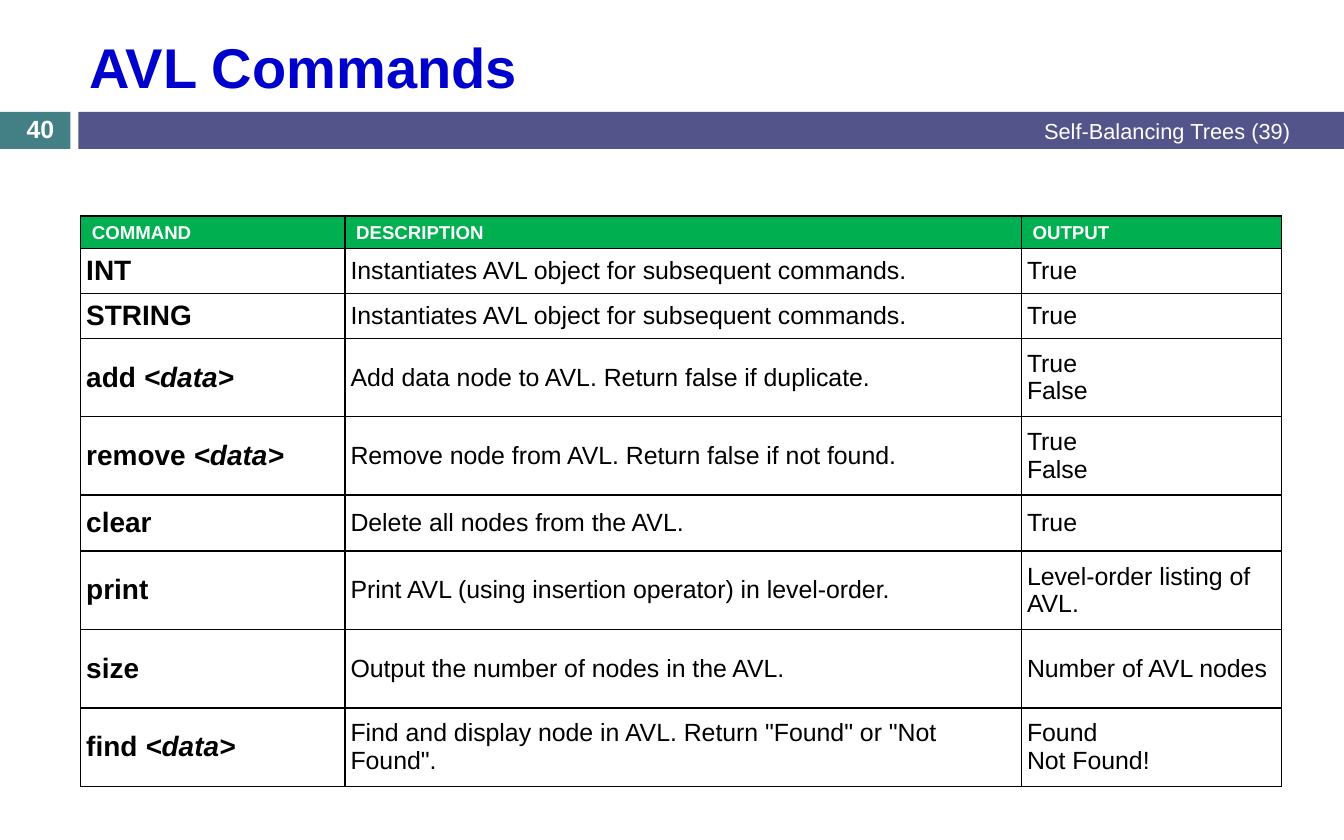
from lxml.etree import SubElement
from pptx import Presentation
from pptx.dml.color import RGBColor
from pptx.enum.shapes import MSO_SHAPE
from pptx.enum.text import MSO_ANCHOR, MSO_AUTO_SIZE, PP_ALIGN
from pptx.oxml.ns import qn
from pptx.util import Inches, Pt


def format_text(text_frame, size, color, bold=False, alignment=PP_ALIGN.LEFT):
    text_frame.word_wrap = True
    for paragraph in text_frame.paragraphs:
        paragraph.alignment = alignment
        for run in paragraph.runs:
            run.font.name = "Arial"
            run.font.size = Pt(size)
            run.font.bold = bold
            run.font.color.rgb = RGBColor.from_string(color)


def format_cell(cell, fill):
    cell.vertical_anchor = MSO_ANCHOR.MIDDLE
    properties = cell._tc.get_or_add_tcPr()
    for side in ("a:lnL", "a:lnR", "a:lnT", "a:lnB"):
        line = SubElement(properties, qn(side), w=str(Pt(1)))
        SubElement(SubElement(line, qn("a:solidFill")), qn("a:srgbClr"), val="000000")
    cell.fill.solid()
    cell.fill.fore_color.rgb = RGBColor.from_string(fill)


presentation = Presentation()
presentation.slide_width = Inches(12)
presentation.slide_height = Inches(7.5)
slide = presentation.slides.add_slide(presentation.slide_layouts[5])

band_top, band_height = Inches(1), Inches(0.33)
band_left = Inches(0.7)
for left, right, color in [
    (0, Inches(0.63), "438086"),
    (band_left, presentation.slide_width, "53548A"),
]:
    band = slide.shapes.add_shape(MSO_SHAPE.RECTANGLE, left, band_top, right - left, band_height)
    band.shadow.inherit = False
    band.fill.solid()
    band.fill.fore_color.rgb = RGBColor.from_string(color)
    band.line.fill.background()

title = slide.shapes.title
title.left, title.top = band_left, Inches(0.19)
title.width, title.height = Inches(10.91), Inches(0.8)
title.text_frame.text = "AVL Commands"
title.text_frame.vertical_anchor = MSO_ANCHOR.MIDDLE
title.text_frame.auto_size = MSO_AUTO_SIZE.NONE
format_text(title.text_frame, 36, "0000CC", True)

for text, left, width, height, size, bold, alignment in [
    ("Self-Balancing Trees (39)", 6.17, 5.45, 0.33, 14, False, PP_ALIGN.RIGHT),
    ("40", 0, 0.72, 0.3, 16, True, PP_ALIGN.CENTER),
]:
    label = slide.shapes.add_textbox(Inches(left), band_top, Inches(width), Inches(height))
    label.text_frame.text = text
    label.text_frame.vertical_anchor = MSO_ANCHOR.MIDDLE
    format_text(label.text_frame, size, "FFFFFF", bold, alignment)

columns = [Inches(2.36), Inches(6.04), Inches(2.32)]
rows = [
    (0.29, "COMMAND", "", "DESCRIPTION", "OUTPUT"),
    (0.4, "INT", "", "Instantiates AVL object for subsequent commands.", "True"),
    (0.4, "STRING", "", "Instantiates AVL object for subsequent commands.", "True"),
    (0.7, "add ", "<data>", "Add data node to AVL. Return false if duplicate.", "True \nFalse"),
    (0.7, "remove ", "<data>", "Remove node from AVL. Return false if not found.", "True \nFalse"),
    (0.5, "clear", "", "Delete all nodes from the AVL.", "True"),
    (0.7, "print", "", "Print AVL (using insertion operator) in level-order.", "Level-order listing of AVL."),
    (0.7, "size", "", "Output the number of nodes in the AVL.", "Number of AVL nodes"),
    (0.7, "find ", "<data>", 'Find and display node in AVL. Return "Found" or "Not Found".', "Found \nNot Found!"),
]
row_top = Inches(1.93)
for row_index, (height, command, argument, description, output) in enumerate(rows):
    is_header = row_index == 0
    frame = slide.shapes.add_table(1, 3, Inches(0.72), row_top, sum(columns), Inches(height))
    table = frame.table
    table.first_row = False
    table.horz_banding = False
    for column_index, text in enumerate((command, description, output)):
        table.columns[column_index].width = columns[column_index]
        cell = table.cell(0, column_index)
        is_command = column_index == 0
        paragraph = cell.text_frame.paragraphs[0]
        paragraph.text = text
        if is_command and argument:
            argument_run = paragraph.add_run()
            argument_run.text = argument
            argument_run.font.italic = True
        format_cell(cell, "00B050" if is_header else "FFFFFF")
        if is_header:
            format_text(cell.text_frame, 12, "FFFFFF", True)
        else:
            cell.margin_left = cell.margin_right = Inches(0.05)
            cell.margin_top = cell.margin_bottom = Inches(0.05)
            format_text(cell.text_frame, 18 if is_command else 16, "000000", is_command)
    row_top += Inches(height)

presentation.save("out.pptx")
